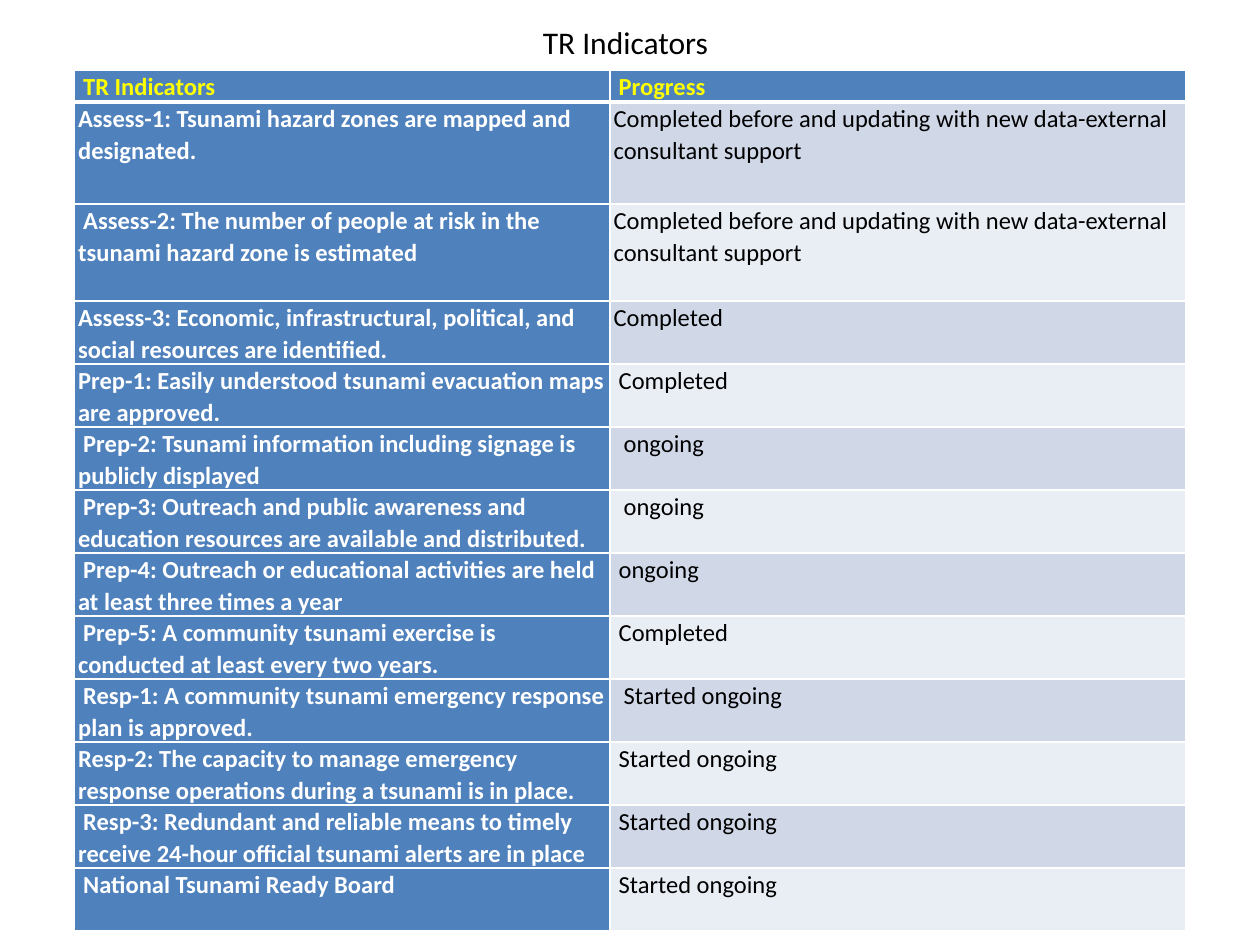
from dataclasses import dataclass

from lxml.etree import SubElement
from pptx import Presentation
from pptx.dml.color import RGBColor
from pptx.enum.text import MSO_AUTO_SIZE as AutoSize
from pptx.oxml.ns import qn
from pptx.table import _Cell as Cell
from pptx.text.text import _Paragraph as Paragraph
from pptx.util import Inches, Pt

COLORS = {
    "accent": "4F81BD",
    "band_dark": "D0D8E8",
    "band_light": "E9EDF4",
    "heading": "FFFF00",
    "white": "FFFFFF",
    "black": "000000",
}
FONT = "Calibri"
SPACE_WIDTH = 0.04
COLUMN_WIDTHS = (4.25, 4.57)
HEADER_HEIGHT = 0.25
ROW_HEIGHT = 0.5


@dataclass
class Indicator:
    """One table row; the indents count spaces before the first line."""
    name: str
    progress: str
    name_indent: int = 1
    progress_indent: int = 1
    height: float = ROW_HEIGHT


UPDATING = "Completed before and updating with new data-external consultant support"
INDICATORS = [
    Indicator("TR Indicators", "Progress", height=HEADER_HEIGHT),
    Indicator("Assess-1: Tsunami hazard zones are mapped and designated.",
              UPDATING, 0, 0, 0.81),
    Indicator("Assess-2: The number of people at risk in the tsunami hazard zone is estimated",
              UPDATING, 1, 0, 0.77),
    Indicator("Assess-3: Economic, infrastructural, political, and social resources are identified.",
              "Completed", 0, 0),
    Indicator("Prep-1: Easily understood tsunami evacuation maps are approved.",
              "Completed", 0),
    Indicator("Prep-2: Tsunami information including signage is publicly displayed",
              "ongoing", 1, 2),
    Indicator("Prep-3: Outreach and public awareness and education resources are available and distributed.",
              "ongoing", 1, 2),
    Indicator("Prep-4: Outreach or educational activities are held at least three times a year",
              "ongoing"),
    Indicator("Prep-5: A community tsunami exercise is conducted at least every two years.",
              "Completed"),
    Indicator("Resp-1: A community tsunami emergency response plan is approved.",
              "Started ongoing", 1, 2),
    Indicator("Resp-2: The capacity to manage emergency response operations during a tsunami is in place.",
              "Started ongoing", 0),
    Indicator("Resp-3: Redundant and reliable means to timely receive 24-hour official tsunami alerts are in place",
              "Started ongoing"),
    Indicator("National Tsunami Ready Board", "Started ongoing"),
]


def rgb(name: str) -> RGBColor:
    return RGBColor.from_string(COLORS[name])


def write(para: Paragraph, text: str, size: int, color: str, bold: bool = False) -> None:
    para.text = text
    font = para.runs[0].font
    font.name, font.size, font.bold = FONT, Pt(size), bold
    font.color.rgb = rgb(color)


def add_borders(cell: Cell, top: int, bottom: int) -> None:
    """Give the cell white borders; widths are in points."""
    properties = cell._tc.get_or_add_tcPr()
    for side, width in (("L", 1), ("R", 1), ("T", top), ("B", bottom)):
        line = SubElement(properties, qn(f"a:ln{side}"), w=str(Pt(width)))
        fill = SubElement(line, qn("a:solidFill"))
        SubElement(fill, qn("a:srgbClr"), val=COLORS["white"])


def fill_cell(cell: Cell, text: str, indent: int, row: int, column: int) -> None:
    if row == 0:
        fill, color = "accent", "heading"
    elif column == 0:
        fill, color = "accent", "white"
    else:
        fill, color = ("band_dark" if row % 2 else "band_light"), "black"

    add_borders(cell, top=3 if row == 1 else 1, bottom=3 if row == 0 else 1)
    cell.fill.solid()
    cell.fill.fore_color.rgb = rgb(fill)
    cell.margin_left = cell.margin_right = Inches(0.03)
    cell.margin_top = cell.margin_bottom = 0

    para = cell.text_frame.paragraphs[0]
    write(para, text, 14, color, bold=row == 0 or column == 0)
    para.line_spacing = 1.07
    if indent:
        properties = para._p.get_or_add_pPr()
        properties.set("marL", "0")
        properties.set("indent", str(Inches(indent * SPACE_WIDTH)))


def main() -> None:
    deck = Presentation()
    deck.slide_width, deck.slide_height = Inches(10), Inches(7.5)
    page = deck.slides.add_slide(deck.slide_layouts[6])

    title = page.shapes.add_textbox(Inches(4.21), Inches(0.13), Inches(1.58), Inches(0.4))
    title.text_frame.word_wrap = False
    title.text_frame.auto_size = AutoSize.SHAPE_TO_FIT_TEXT
    write(title.text_frame.paragraphs[0], "TR Indicators", 18, "black")

    table = page.shapes.add_table(
        len(INDICATORS), len(COLUMN_WIDTHS), Inches(0.59), Inches(0.56),
        Inches(sum(COLUMN_WIDTHS)), Inches(sum(item.height for item in INDICATORS)),
    ).table
    for column, width in zip(table.columns, COLUMN_WIDTHS):
        column.width = Inches(width)
    for row, item in enumerate(INDICATORS):
        table.rows[row].height = Inches(item.height)
        fill_cell(table.cell(row, 0), item.name, item.name_indent, row, 0)
        fill_cell(table.cell(row, 1), item.progress, item.progress_indent, row, 1)

    deck.save("out.pptx")


if __name__ == "__main__":
    main()
